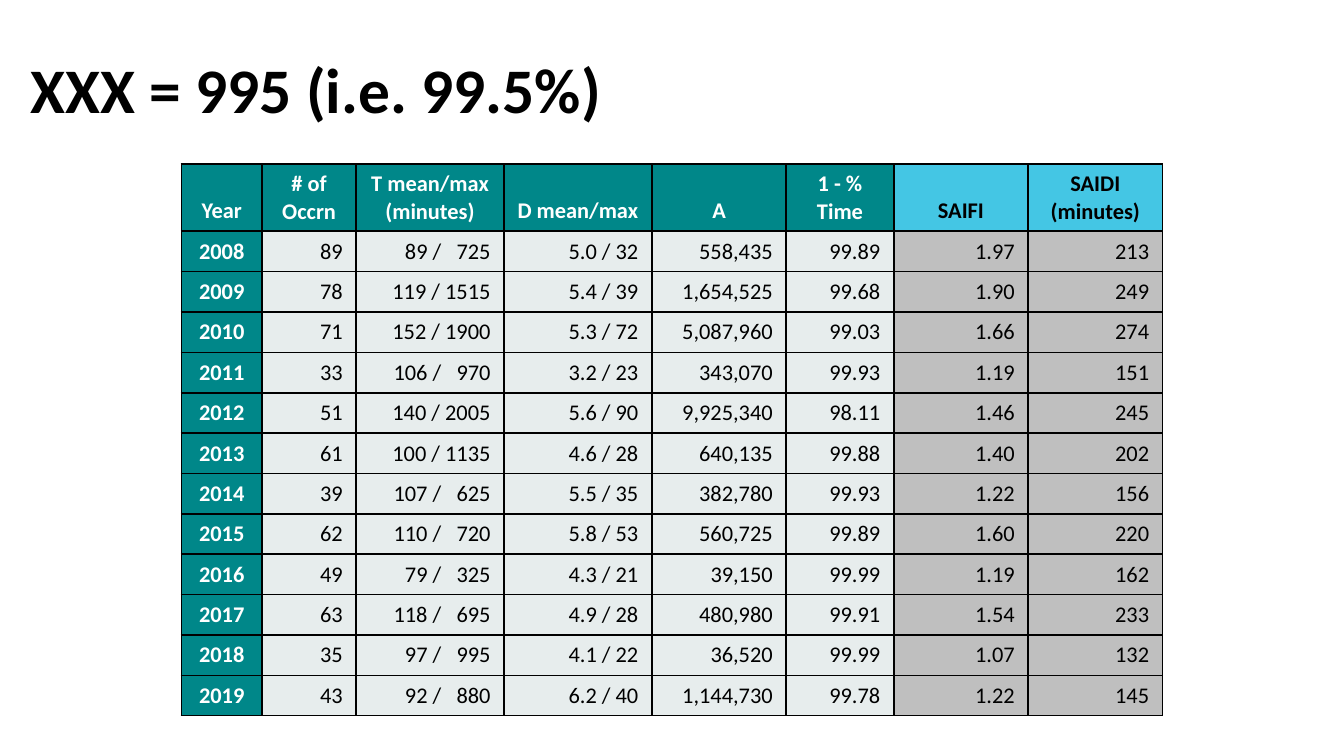
"""Build a slide with a titled table of yearly outage figures."""
from dataclasses import dataclass

from lxml import etree
from pptx import Presentation
from pptx.dml.color import RGBColor
from pptx.enum.text import MSO_ANCHOR, PP_ALIGN
from pptx.oxml.ns import qn
from pptx.slide import Slide
from pptx.table import _Cell
from pptx.text.text import _Paragraph
from pptx.util import Pt

CENTER, RIGHT = PP_ALIGN.CENTER, PP_ALIGN.RIGHT
TOP, BOTTOM = MSO_ANCHOR.TOP, MSO_ANCHOR.BOTTOM
BORDER_SIDES = ("a:lnL", "a:lnR", "a:lnT", "a:lnB")


@dataclass(frozen=True)
class Theme:
    font: str = "Calibri"
    title_size: float = 34
    table_size: float = 12
    border_width: float = 1
    wide_gap: float = 5.4
    black: str = "000000"
    white: str = "FFFFFF"
    teal: str = "008789"
    sky: str = "44C6E4"
    mist: str = "E7EDED"
    grey: str = "BFBFBF"


THEME = Theme()


@dataclass(frozen=True)
class Column:
    heading: str
    width: float
    head_fill: str = THEME.teal
    head_color: str = THEME.white
    body_fill: str = THEME.mist
    body_color: str = THEME.black
    body_align: PP_ALIGN = RIGHT
    body_bold: bool = False


def index_column(heading: str) -> Column:
    return Column(heading, 72, THEME.sky, THEME.black, THEME.grey)


COLUMNS = (
    Column("Year", 43.2, body_fill=THEME.teal, body_color=THEME.white,
           body_align=CENTER, body_bold=True),
    Column("# of Occrn", 50.4),
    Column("T mean/max (minutes)", 79.2),
    Column("D mean/max", 79.2),
    Column("A", 72),
    Column("1 - % Time", 57.6),
    index_column("SAIFI"),
    index_column("SAIDI (minutes)"),
)
DURATION_COLUMN = 2
HEAD_HEIGHT, ROW_HEIGHT = 32.4, 19.44

YEARS = (
    ("2008", "89", "89 / 725", "5.0 / 32", "558,435", "99.89", "1.97", "213"),
    ("2009", "78", "119 / 1515", "5.4 / 39", "1,654,525", "99.68", "1.90", "249"),
    ("2010", "71", "152 / 1900", "5.3 / 72", "5,087,960", "99.03", "1.66", "274"),
    ("2011", "33", "106 / 970", "3.2 / 23", "343,070", "99.93", "1.19", "151"),
    ("2012", "51", "140 / 2005", "5.6 / 90", "9,925,340", "98.11", "1.46", "245"),
    ("2013", "61", "100 / 1135", "4.6 / 28", "640,135", "99.88", "1.40", "202"),
    ("2014", "39", "107 / 625", "5.5 / 35", "382,780", "99.93", "1.22", "156"),
    ("2015", "62", "110 / 720", "5.8 / 53", "560,725", "99.89", "1.60", "220"),
    ("2016", "49", "79 / 325", "4.3 / 21", "39,150", "99.99", "1.19", "162"),
    ("2017", "63", "118 / 695", "4.9 / 28", "480,980", "99.91", "1.54", "233"),
    ("2018", "35", "97 / 995", "4.1 / 22", "36,520", "99.99", "1.07", "132"),
    ("2019", "43", "92 / 880", "6.2 / 40", "1,144,730", "99.78", "1.22", "145"),
)


def add_span(para: _Paragraph, text: str, size: float, color: str, bold: bool,
             spacing: float = 0) -> None:
    span = para.add_run()
    span.text = text
    span.font.name = THEME.font
    span.font.size = Pt(size)
    span.font.bold = bold
    span.font.color.rgb = RGBColor.from_string(color)
    if spacing:
        span.font._element.set("spc", str(round(spacing * 100)))


def add_borders(cell: _Cell) -> None:
    properties = cell._tc.get_or_add_tcPr()
    for position, side in enumerate(BORDER_SIDES):
        line = etree.Element(qn(side), w=str(Pt(THEME.border_width)))
        fill = etree.SubElement(line, qn("a:solidFill"))
        etree.SubElement(fill, qn("a:srgbClr"), val=THEME.black)
        properties.insert(position, line)


def fill_cell(cell: _Cell, text: str, fill: str, color: str, bold: bool,
              align: PP_ALIGN, anchor: MSO_ANCHOR, padded: bool = False) -> None:
    cell.fill.solid()
    cell.fill.fore_color.rgb = RGBColor.from_string(fill)
    cell.vertical_anchor = anchor
    add_borders(cell)
    para = cell.text_frame.paragraphs[0]
    para.alignment = align
    if padded:
        mean, peak = text.rsplit(" ", 1)
        add_span(para, mean, THEME.table_size, color, bold)
        add_span(para, " ", THEME.table_size, color, bold, THEME.wide_gap)
        add_span(para, peak, THEME.table_size, color, bold)
    else:
        add_span(para, text, THEME.table_size, color, bold)


def add_title(page: Slide, text: str) -> None:
    box = page.shapes.add_textbox(Pt(9.4), Pt(21.6), Pt(448.6), Pt(64))
    frame = box.text_frame
    frame.word_wrap = True
    frame.vertical_anchor = TOP
    frame.margin_top = Pt(5)
    add_span(frame.paragraphs[0], text, THEME.title_size, THEME.black, True)


def add_year_table(page: Slide) -> None:
    width = sum(column.width for column in COLUMNS)
    height = HEAD_HEIGHT + ROW_HEIGHT * len(YEARS)
    table = page.shapes.add_table(len(YEARS) + 1, len(COLUMNS), Pt(97.2), Pt(87.84),
                                  Pt(width), Pt(height)).table
    table.horz_banding = False
    for row in table.rows:
        row.height = Pt(ROW_HEIGHT)
    table.rows[0].height = Pt(HEAD_HEIGHT)
    for index, column in enumerate(COLUMNS):
        table.columns[index].width = Pt(column.width)
        fill_cell(table.cell(0, index), column.heading, column.head_fill,
                  column.head_color, True, CENTER, BOTTOM)
        for number, year in enumerate(YEARS, start=1):
            text = year[index]
            padded = index == DURATION_COLUMN and len(text.split()[-1]) < 4
            fill_cell(table.cell(number, index), text, column.body_fill,
                      column.body_color, column.body_bold, column.body_align, TOP, padded)


def main() -> None:
    deck = Presentation()
    deck.slide_width, deck.slide_height = Pt(720), Pt(405)
    page = deck.slides.add_slide(deck.slide_layouts[6])
    add_title(page, "XXX = 995 (i.e. 99.5%)")
    add_year_table(page)
    deck.save("out.pptx")


if __name__ == "__main__":
    main()
